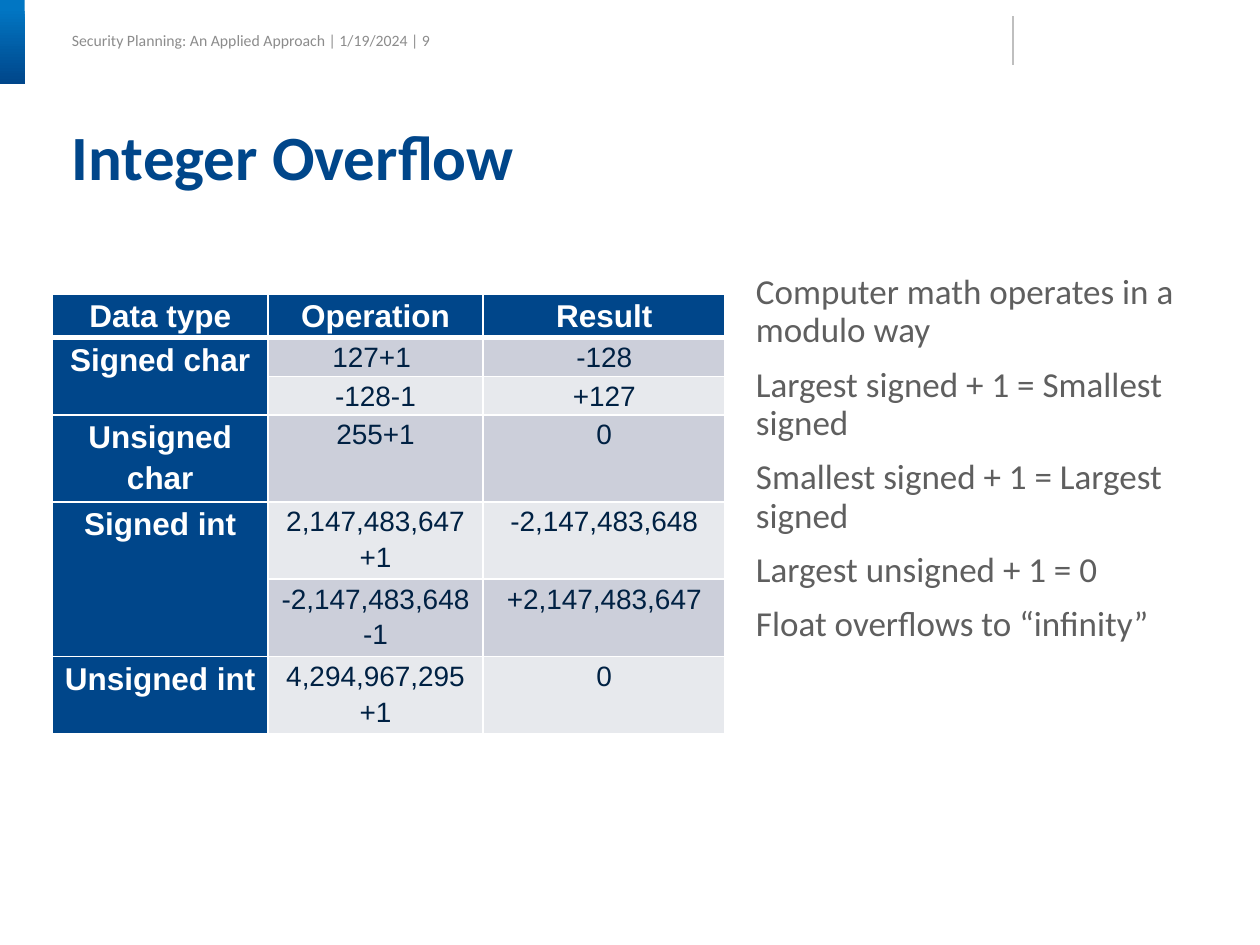
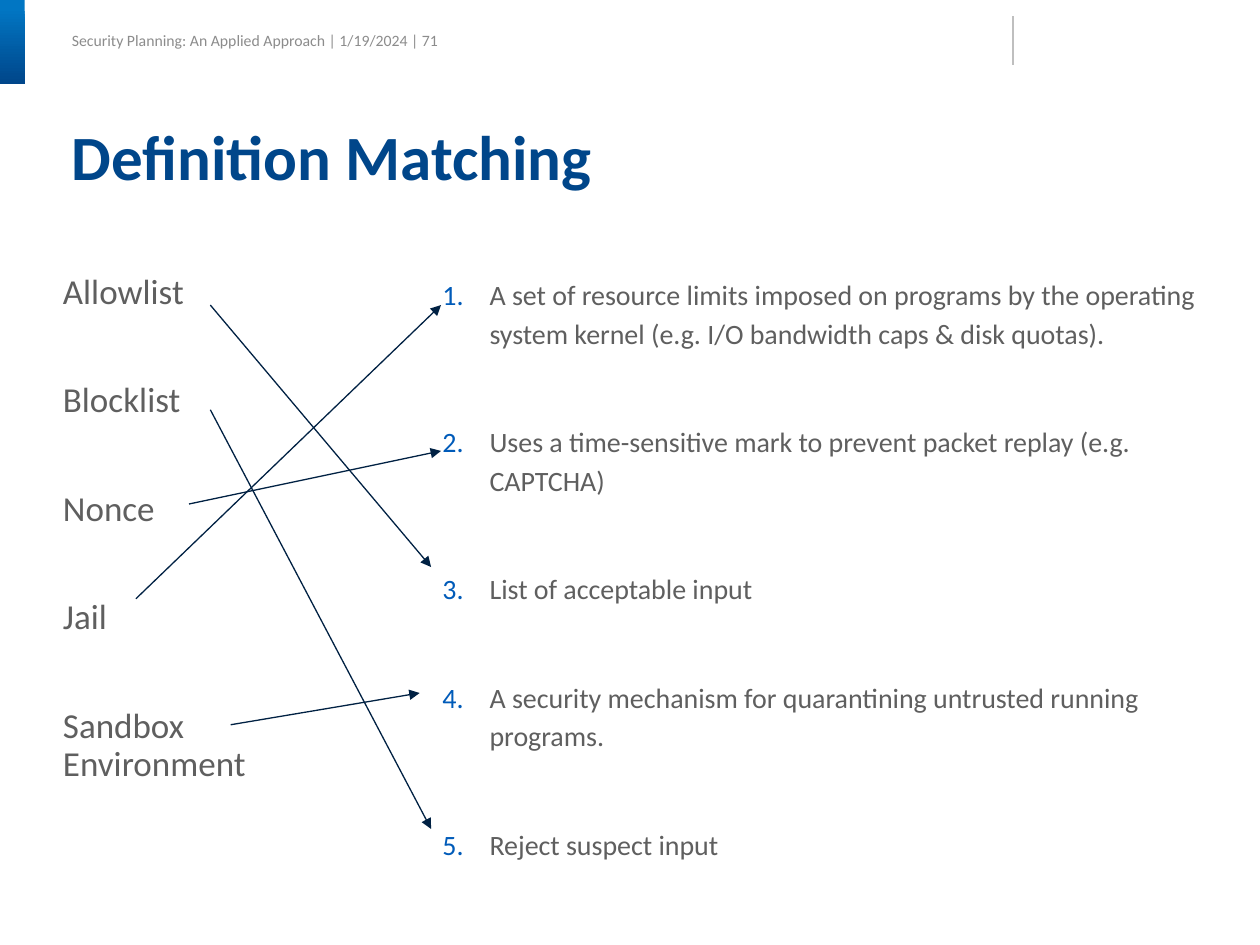
from lxml.etree import SubElement
from pptx import Presentation
from pptx.dml.color import RGBColor
from pptx.enum.shapes import MSO_CONNECTOR, MSO_SHAPE
from pptx.enum.text import MSO_ANCHOR, PP_ALIGN
from pptx.oxml.ns import qn
from pptx.util import Cm, Pt

NAVY, SKY, INK = "00468A", "0176C3", "002143"
NUMBER_BLUE, BODY_GRAY, FOOTER_GRAY, RULE_GRAY = "005BB9", "5F5F5F", "8C8C8C", "BFBFBF"
WHITE, BANDS = "FFFFFF", ("E7E9ED", "CCCFDA")
BODY_TOP, BODY_HEIGHT = 5.5, 10.8

OVERFLOW_ROWS = [
    ("Data type", "Operation", "Result"),
    ("Signed char", "127+1 ", "-128"),
    ("", "-128-1", "+127"),
    ("Unsigned char", "255+1", "0"),
    ("Signed int", "2,147,483,647 +1", "-2,147,483,648"),
    ("", "-2,147,483,648 -1", "+2,147,483,647"),
    ("Unsigned int", "4,294,967,295 +1", "0"),
]
COLUMN_WIDTHS = (4.34, 4.34, 4.88)
ROW_HEIGHTS = (0.82, 0.72, 0.72, 1.64, 1.44, 1.44, 1.44)
SPANNED_TYPES = (1, 4)

OVERFLOW_NOTES = [
    "Computer math operates in a modulo way",
    "Largest signed + 1 = Smallest signed",
    "Smallest signed + 1 = Largest signed",
    "Largest unsigned + 1 = 0",
    "Float overflows to “infinity”",
]
TERMS = ["Allowlist", "Blocklist", "Nonce", "Jail", "Sandbox Environment"]
DEFINITIONS = [
    "A set of resource limits imposed on programs by the operating system kernel "
    "(e.g. I/O bandwidth caps & disk quotas).",
    "Uses a time-sensitive mark to prevent packet replay (e.g. CAPTCHA)",
    "List of acceptable input",
    "A security mechanism for quarantining untrusted running programs.",
    "Reject suspect input",
]
MATCHES = [
    ((4.24, 6.15), (8.69, 11.43)),
    ((4.24, 8.26), (8.69, 16.71)),
    ((3.81, 10.16), (8.89, 9.09)),
    ((2.74, 12.07), (8.89, 6.15)),
    ((4.65, 14.61), (8.46, 13.97)),
]


def color(hex_code):
    """Turn a hex string into a colour."""
    return RGBColor.from_string(hex_code)


def style_runs(paragraph, size, hex_code, font="Calibri", bold=False):
    """Format every run of a paragraph."""
    for run in paragraph.runs:
        run.font.name, run.font.size, run.font.bold = font, Pt(size), bold
        run.font.color.rgb = color(hex_code)


def add_frame(slide, left, top, width, height):
    """Add a wrapping text box without insets and return its text frame."""
    frame = slide.shapes.add_textbox(Cm(left), Cm(top), Cm(width), Cm(height)).text_frame
    frame.word_wrap = True
    frame.margin_left = frame.margin_top = frame.margin_right = frame.margin_bottom = 0
    return frame


def add_line(slide, start, end, hex_code, arrow=False):
    """Draw a thin straight line, with an arrowhead at its end if asked."""
    line = slide.shapes.add_connector(MSO_CONNECTOR.STRAIGHT, *map(Cm, start + end))
    line.line.color.rgb = color(hex_code)
    line.line.width = Pt(0.75)
    properties = line._element.spPr
    if arrow:
        SubElement(properties.find(qn("a:ln")), qn("a:tailEnd"), type="triangle")
    SubElement(properties, qn("a:effectLst"))


def number_paragraph(paragraph):
    """Give a paragraph a coloured automatic number and a hanging indent."""
    properties = paragraph._p.get_or_add_pPr()
    properties.set("marL", str(Cm(1.19)))
    properties.set("indent", str(-Cm(0.95)))
    SubElement(SubElement(properties, qn("a:buClr")), qn("a:srgbClr"), val=NUMBER_BLUE)
    SubElement(properties, qn("a:buFont"), typeface="Calibri")
    SubElement(properties, qn("a:buAutoNum"), type="arabicPeriod")


def add_body(slide, left, width, entries, gap, size=20, numbered=False):
    """Write a column of paragraphs with an even gap between them."""
    frame = add_frame(slide, left, BODY_TOP, width, BODY_HEIGHT)
    frame.text = "\n".join(entries)
    for position, paragraph in enumerate(frame.paragraphs):
        if numbered:
            number_paragraph(paragraph)
        paragraph.line_spacing = Pt(22)
        paragraph.space_before = Pt(gap if position else 0)
        style_runs(paragraph, size, BODY_GRAY)


def add_base_slide(deck, title, number):
    """Add a slide with the corner band, running header and title."""
    slide = deck.slides.add_slide(deck.slide_layouts[6])

    header = add_frame(slide, 1.45, 0.58, 7.5, 0.58)
    header.margin_bottom = Cm(0.1)
    header.vertical_anchor = MSO_ANCHOR.MIDDLE
    header.text = f"Security Planning: An Applied Approach | 1/19/2024 | {number}"
    style_runs(header.paragraphs[0], 9, FOOTER_GRAY)

    band = slide.shapes.add_shape(MSO_SHAPE.RECTANGLE, 0, 0, Cm(0.5), Cm(1.7))
    band.shadow.inherit = False
    band.line.fill.background()
    band.fill.gradient()
    band.fill.gradient_angle = 270
    for stop, position, shade in zip(band.fill.gradient_stops, (0.1, 1), (SKY, NAVY)):
        stop.position, stop.color.rgb = position, color(shade)

    add_line(slide, (20.42, 0.33), (20.42, 1.32), RULE_GRAY)

    heading = add_frame(slide, 1.45, 2.54, 22.66, 1.4)
    heading.text = title
    heading.paragraphs[0].line_spacing = 0.9
    style_runs(heading.paragraphs[0], 36, NAVY, bold=True)
    return slide


def border_cell(cell, row):
    """Draw white cell borders, thicker under the header row."""
    properties = cell._tc.get_or_add_tcPr()
    for side in "LRTB":
        thick = (row, side) in ((0, "B"), (1, "T"))
        edge = SubElement(properties, qn(f"a:ln{side}"), w=str(Pt(3 if thick else 1)))
        SubElement(SubElement(edge, qn("a:solidFill")), qn("a:srgbClr"), val=WHITE)


def fill_cell(cell, text, row, is_heading):
    """Write and format one cell of the overflow table."""
    border_cell(cell, row)
    cell.fill.solid()
    cell.fill.fore_color.rgb = color(NAVY if is_heading else BANDS[row % 2])
    cell.margin_left = cell.margin_right = Cm(0.18)
    cell.margin_top = cell.margin_bottom = 0
    cell.text_frame.text = text
    paragraph = cell.text_frame.paragraphs[0]
    paragraph.alignment = PP_ALIGN.CENTER
    paragraph.line_spacing = 1.15
    size, shade = (18, WHITE) if is_heading else (16, INK)
    style_runs(paragraph, size, shade, "Arial", is_heading)


def add_overflow_table(slide):
    """Add the table of operations that overflow each integer type."""
    table = slide.shapes.add_table(
        len(OVERFLOW_ROWS), len(COLUMN_WIDTHS), Cm(1.06), Cm(5.93),
        Cm(sum(COLUMN_WIDTHS)), Cm(sum(ROW_HEIGHTS))).table
    table.horz_banding = False
    for column, width in zip(table.columns, COLUMN_WIDTHS):
        column.width = Cm(width)
    for row, height in zip(table.rows, ROW_HEIGHTS):
        row.height = Cm(height)
    for row, texts in enumerate(OVERFLOW_ROWS):
        for column, text in enumerate(texts):
            fill_cell(table.cell(row, column), text, row, row == 0 or column == 0)
    for row in SPANNED_TYPES:
        table.cell(row, 0).merge(table.cell(row + 1, 0))


def main():
    """Build both slides and save the deck."""
    deck = Presentation()
    deck.slide_width, deck.slide_height = Cm(25.4), Cm(19.05)

    overflow = add_base_slide(deck, "Integer Overflow", 9)
    add_overflow_table(overflow)
    add_body(overflow, 15.24, 8.89, OVERFLOW_NOTES, gap=9)

    matching = add_base_slide(deck, "Definition Matching", 71)
    add_body(matching, 1.27, 5.5, TERMS, gap=40)
    add_body(matching, 8.68, 15.45, DEFINITIONS, gap=40, size=16, numbered=True)
    for term_point, definition_point in MATCHES:
        add_line(matching, term_point, definition_point, INK, arrow=True)

    deck.save("out.pptx")


if __name__ == "__main__":
    main()
